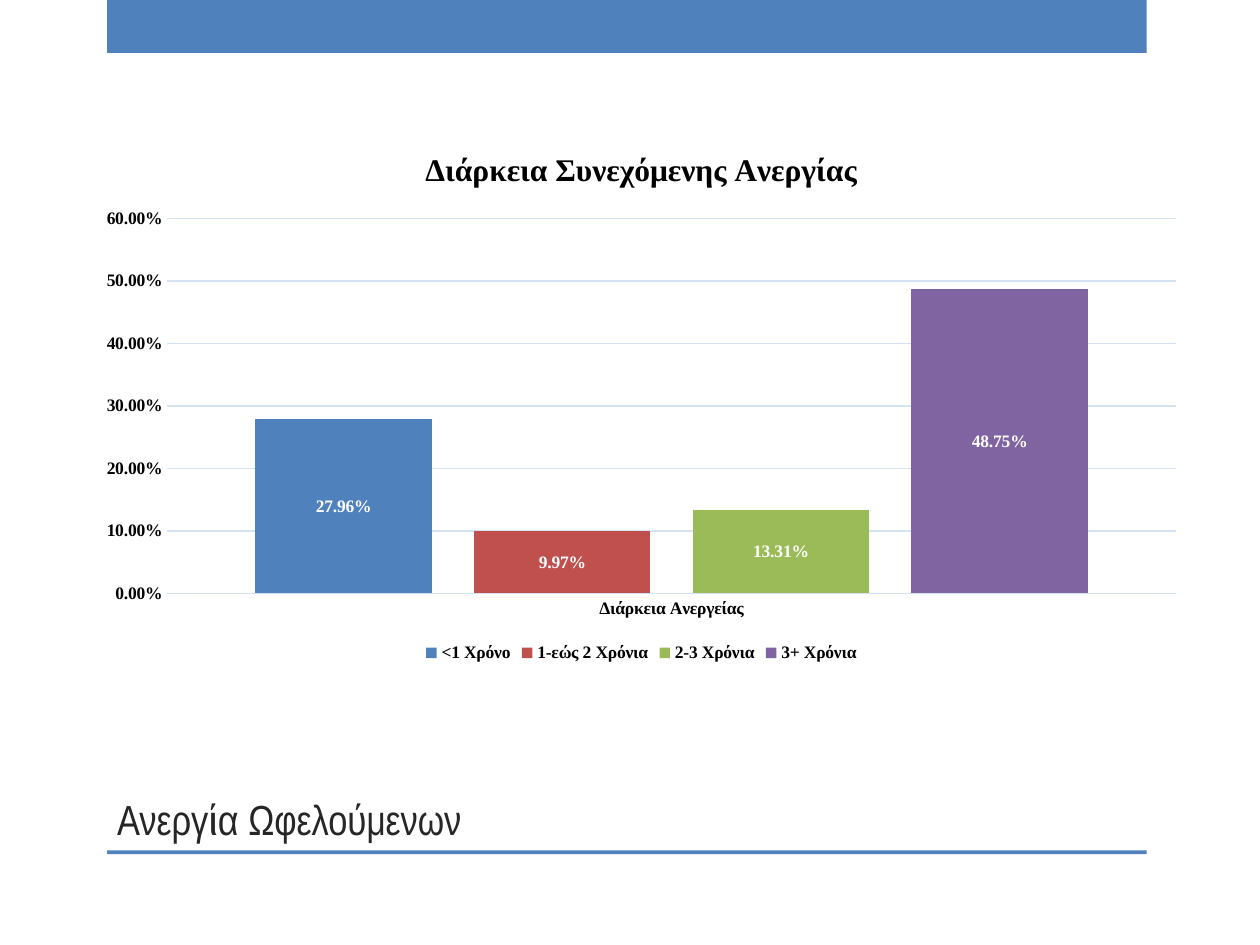
from dataclasses import dataclass

import pptx
import pptx.chart.data
import pptx.dml.color
import pptx.enum.chart
import pptx.enum.shapes
import pptx.enum.text
import pptx.util

RGB = pptx.dml.color.RGBColor
Inches = pptx.util.Inches
Pt = pptx.util.Pt
Enum = pptx.enum.chart

BLUE = RGB(0x4F, 0x81, 0xBD)
RED = RGB(0xC0, 0x50, 0x4D)
GREEN = RGB(0x9B, 0xBB, 0x59)
PURPLE = RGB(0x80, 0x64, 0xA2)
PALE = RGB(0xD4, 0xE3, 0xF4)
DARK = RGB(0x26, 0x26, 0x26)
BLACK = RGB(0, 0, 0)
WHITE = RGB(0xFF, 0xFF, 0xFF)
SERIF = "Times New Roman"
RATE = "0.00%"


@dataclass
class Band:
    top: float
    height: float


@dataclass
class Term:
    name: str
    share: float
    color: RGB


BANDS = [Band(0, 0.42), Band(6.75, 0.03)]
TERMS = [
    Term("<1 Χρόνο", 0.2796, BLUE),
    Term("1-εώς 2 Χρόνια", 0.0997, RED),
    Term("2-3 Χρόνια", 0.1331, GREEN),
    Term("3+ Χρόνια", 0.4875, PURPLE),
]


def apply(item, values: dict) -> None:
    for key, value in values.items():
        setattr(item, key, value)


def style(font, size: float, color: RGB, name: str = SERIF, bold: bool = True) -> None:
    apply(font, {"size": Pt(size), "name": name, "bold": bold})
    font.color.rgb = color


def rule(line) -> None:
    line.color.rgb = PALE
    line.width = Pt(0.75)


def draw_band(slide, band: Band) -> None:
    shape = slide.shapes.add_shape(
        pptx.enum.shapes.MSO_SHAPE.RECTANGLE,
        Inches(0.85), Inches(band.top), Inches(8.25), Inches(band.height))
    shape.shadow.inherit = False
    shape.fill.solid()
    shape.fill.fore_color.rgb = BLUE
    shape.line.fill.background()


def draw_title(slide, text: str) -> None:
    title = slide.shapes.title
    apply(title, {"left": Inches(0.83), "top": Inches(5),
                  "width": Inches(7.42), "height": Inches(1.75)})
    frame = title.text_frame
    frame.text = text
    apply(frame, {"vertical_anchor": pptx.enum.text.MSO_ANCHOR.BOTTOM,
                  "word_wrap": True,
                  "auto_size": pptx.enum.text.MSO_AUTO_SIZE.NONE})
    line = frame.paragraphs[0]
    line.alignment = pptx.enum.text.PP_ALIGN.LEFT
    style(line.runs[0].font, 24, DARK, "Arial Narrow", False)


def draw_term(series, term: Term) -> None:
    series.format.fill.solid()
    series.format.fill.fore_color.rgb = term.color
    series.invert_if_negative = False
    labels = series.data_labels
    apply(labels, {"show_value": True, "number_format": RATE,
                   "number_format_is_linked": False,
                   "position": Enum.XL_LABEL_POSITION.CENTER})
    style(labels.font, 10, WHITE)


def draw_chart(slide) -> None:
    data = pptx.chart.data.CategoryChartData(number_format=RATE)
    data.categories = ["Διάρκεια Ανεργείας"]
    for term in TERMS:
        data.add_series(term.name, [term.share])
    chart = slide.shapes.add_chart(
        Enum.XL_CHART_TYPE.COLUMN_CLUSTERED,
        Inches(0.67), Inches(1.01), Inches(8.84), Inches(4.29), data).chart
    style(chart.font, 10, BLACK)

    chart.has_title = True
    head = chart.chart_title.text_frame
    head.text = "Διάρκεια Συνεχόμενης Ανεργίας"
    style(head.paragraphs[0].runs[0].font, 18, BLACK)

    chart.has_legend = True
    apply(chart.legend, {"position": Enum.XL_LEGEND_POSITION.BOTTOM,
                         "include_in_layout": False})
    style(chart.legend.font, 10, BLACK)

    for axis in (chart.category_axis, chart.value_axis):
        apply(axis, {"major_tick_mark": Enum.XL_TICK_MARK.NONE,
                     "minor_tick_mark": Enum.XL_TICK_MARK.NONE})
        style(axis.tick_labels.font, 10, BLACK)
    rule(chart.category_axis.format.line)
    scale = chart.value_axis
    apply(scale, {"minimum_scale": 0, "maximum_scale": 0.6, "major_unit": 0.1})
    apply(scale.tick_labels, {"number_format": RATE,
                              "number_format_is_linked": False})
    scale.format.line.fill.background()
    rule(scale.major_gridlines.format.line)

    plot = chart.plots[0]
    apply(plot, {"gap_width": 100, "overlap": -24, "vary_by_categories": False})
    for series, term in zip(plot.series, TERMS):
        draw_term(series, term)


def main() -> None:
    deck = pptx.Presentation()
    apply(deck, {"slide_width": Inches(10), "slide_height": Inches(7.5)})
    slide = deck.slides.add_slide(deck.slide_layouts[5])
    for band in BANDS:
        draw_band(slide, band)
    draw_title(slide, "Ανεργία Ωφελούμενων")
    draw_chart(slide)
    deck.save("out.pptx")


if __name__ == "__main__":
    main()
